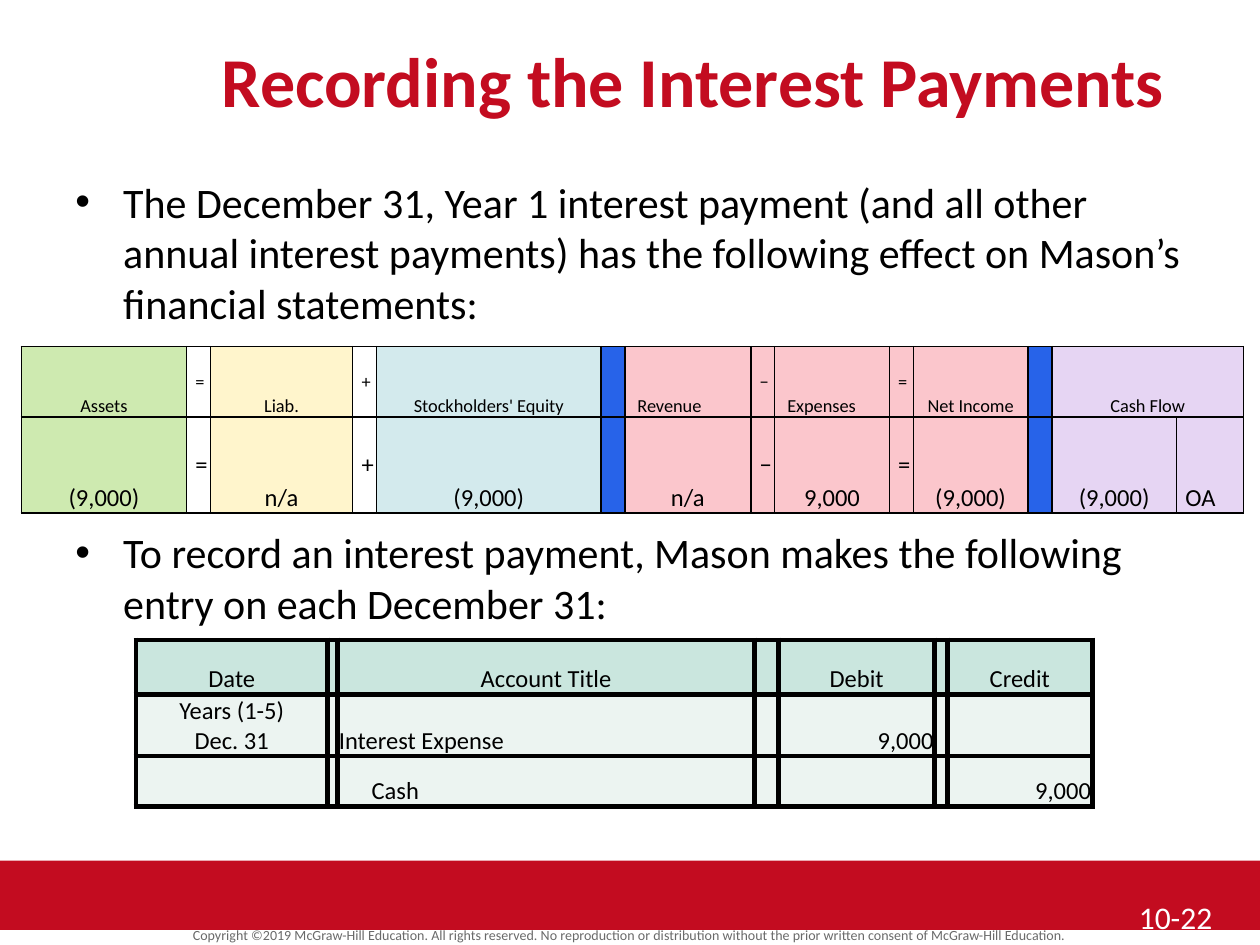
"""Build the slide on recording interest payments."""
from lxml import etree
from pptx import Presentation
from pptx import util as u
from pptx.dml.color import RGBColor
from pptx.enum import shapes, text
from pptx.oxml.ns import qn

THEME = {
    "font": "Calibri",
    "red": "C30C20", "black": "000000", "white": "FFFFFF", "grey": "6A6A6A",
    "green": "CEEAB0", "yellow": "FFF5CC", "aqua": "D3EAED", "blue": "2763E9",
    "pink": "FBC6CC", "violet": "E6D5F3", "mint": "CAE6DE", "pale": "ECF4F1",
    "title": 40, "body": 24, "number": 18, "cell": 14, "label": 10.5, "small": 8,
}
UNIT = u.Inches(0.1)
COLUMNS, ROWS = 100, 75
ALIGN = {"l": text.PP_ALIGN.LEFT, "c": text.PP_ALIGN.CENTER, "r": text.PP_ALIGN.RIGHT}
ANCHOR = text.MSO_ANCHOR


def write(paragraph, words, size, color="black", align="l", bold=False, **formats):
    paragraph.text = words
    for name, value in {"alignment": ALIGN[align], **formats}.items():
        setattr(paragraph, name, value)
    for name, value in {"name": THEME["font"], "size": u.Pt(THEME[size]), "bold": bold}.items():
        setattr(paragraph.font, name, value)
    paragraph.font.color.rgb = RGBColor.from_string(THEME[color])


def add_grid(slide, left, top, widths, rows, border, margins):
    heights = [row["height"] for row in rows]
    frame = slide.shapes.add_table(
        len(rows), len(widths), *(round(n * UNIT) for n in (left, top, sum(widths), sum(heights))))
    table = frame.table
    for name in ("first_row", "horz_banding"):
        setattr(table, name, False)
    for column, width in zip(table.columns, widths):
        column.width = round(width * UNIT)
    for table_row, row in zip(table.rows, rows):
        table_row.height = round(row["height"] * UNIT)
        for cell, words, align, fill in zip(table_row.cells, row["words"], row["align"], row["fills"]):
            formats = dict(margins, vertical_anchor=ANCHOR.MIDDLE if words in ("=", "+", "−") else ANCHOR.BOTTOM)
            for name, value in formats.items():
                setattr(cell, name, value)
            properties = cell._tc.get_or_add_tcPr()
            for side in ("lnL", "lnR", "lnT", "lnB"):
                line = etree.SubElement(properties, qn(f"a:{side}"), w=str(u.Pt(border)))
                solid = etree.SubElement(line, qn("a:solidFill"))
                etree.SubElement(solid, qn("a:srgbClr"), val=THEME["black"])
            if fill:
                cell.fill.solid()
                cell.fill.fore_color.rgb = RGBColor.from_string(THEME[fill])
            else:
                cell.fill.background()
            for index, line_words in enumerate(words.split("\n")):
                paragraph = cell.text_frame.add_paragraph() if index else cell.text_frame.paragraphs[0]
                write(paragraph, line_words, row["size"], align=align)
    return table


presentation = Presentation()
presentation.slide_width = COLUMNS * UNIT
presentation.slide_height = ROWS * UNIT
slide = presentation.slides.add_slide(presentation.slide_layouts[6])

band = slide.shapes.add_shape(
    shapes.MSO_SHAPE.RECTANGLE, 0, round(68.3 * UNIT), COLUMNS * UNIT, round(5.5 * UNIT))
band.shadow.inherit = False
band.fill.solid()
band.fill.fore_color.rgb = RGBColor.from_string(THEME["red"])
band.line.fill.background()

boxes = [
    {"at": (0, 73.4, 100, 1.9), "anchor": ANCHOR.MIDDLE, "paragraphs": [
        {"words": "Copyright ©2019 McGraw-Hill Education. All rights reserved. No reproduction or "
                  "distribution without the prior written consent of McGraw-Hill Education.",
         "size": "small", "color": "grey", "align": "c", "line_spacing": 0.8}]},
    {"at": (10, 2.5, 90, 6.7), "paragraphs": [
        {"words": "Recording the Interest Payments", "size": "title", "color": "red",
         "align": "c", "bold": True}]},
    {"at": (5, 13.5, 90, 51.5), "bullet": True, "paragraphs": [
        {"words": "The December 31, Year 1 interest payment (and all other annual interest "
                  "payments) has the following effect on Mason’s financial statements:",
         "size": "body", "space_after": u.Pt(8)},
        {"words": "To record an interest payment, Mason makes the following entry on each "
                  "December 31:", "size": "body", "space_before": u.Pt(106)}]},
    {"at": (89.4, 70.8, 10.6, 4.2), "paragraphs": [
        {"words": "10-22", "size": "number", "color": "white"}]},
]
for box in boxes:
    frame = slide.shapes.add_textbox(*(round(n * UNIT) for n in box["at"])).text_frame
    frame.word_wrap = True
    frame.vertical_anchor = box.get("anchor", ANCHOR.TOP)
    for index, content in enumerate(box["paragraphs"]):
        paragraph = frame.add_paragraph() if index else frame.paragraphs[0]
        if box.get("bullet"):
            properties = paragraph._p.get_or_add_pPr()
            for name, value in {"marL": u.Inches(0.38), "indent": -u.Inches(0.38)}.items():
                properties.set(name, str(value))
            etree.SubElement(properties, qn("a:buFont"), typeface="Arial")
            etree.SubElement(properties, qn("a:buChar"), char="•")
        write(paragraph, **content)

entry_rows = [
    {"height": 4.3, "words": ["Date", "", "Account Title", "", "Debit", "", "Credit"],
     "align": "ccccccc", "fills": ["mint"] * 7, "size": "cell"},
    {"height": 4.9, "words": ["Years (1-5)\nDec. 31", "", "Interest Expense", "", "9,000", "", ""],
     "align": "cllcrcr", "fills": ["pale"] * 7, "size": "cell"},
    {"height": 4, "words": ["", "", "Cash", "", "", "", "9,000"],
     "align": "cllcrcr", "fills": ["pale"] * 7, "size": "cell"},
]
entry_margins = {"margin_left": u.Inches(0.01), "margin_right": u.Inches(0.01),
                 "margin_top": u.Inches(0.01), "margin_bottom": 0}
entry = add_grid(slide, 10.8, 50.8, [15.2, 0.8, 33.1, 1.9, 12.4, 1, 11.5], entry_rows, 3, entry_margins)
entry.cell(2, 2).margin_left = u.Inches(0.27)

effect_fills = ["green", None, "yellow", None, "aqua", "blue", *["pink"] * 5, "blue", *["violet"] * 2]
effect_rows = [
    {"height": 5.6, "words": ["Assets", "=", "Liab.", "+", "Stockholders' Equity", "", "Revenue", "−",
                              "Expenses", "=", "Net Income", "", "Cash Flow", ""],
     "align": "cccccclclccccc", "fills": effect_fills, "size": "label"},
    {"height": 7.6, "words": ["(9,000)", "=", "n/a", "+", "(9,000)", "", "n/a", "−",
                              "9,000", "=", "(9,000)", "", "(9,000)", "OA"],
     "align": "cccccccccccccl", "fills": effect_fills, "size": "cell"},
]
effect_margins = {"margin_left": u.Inches(0.07), "margin_right": u.Inches(0.07),
                  "margin_top": 0, "margin_bottom": 0}
effect_widths = [13.1, 1.9, 11.3, 1.9, 17.8, 1.9, 10, 1.9, 9.1, 1.9, 9.1, 1.9, 9.9, 5.3]
effect = add_grid(slide, 1.7, 27.5, effect_widths, effect_rows, 1, effect_margins)
effect.cell(0, 12).merge(effect.cell(0, 13))
for column in (6, 8):
    effect.cell(0, column).margin_left = u.Inches(0.1)

presentation.save("out.pptx")
